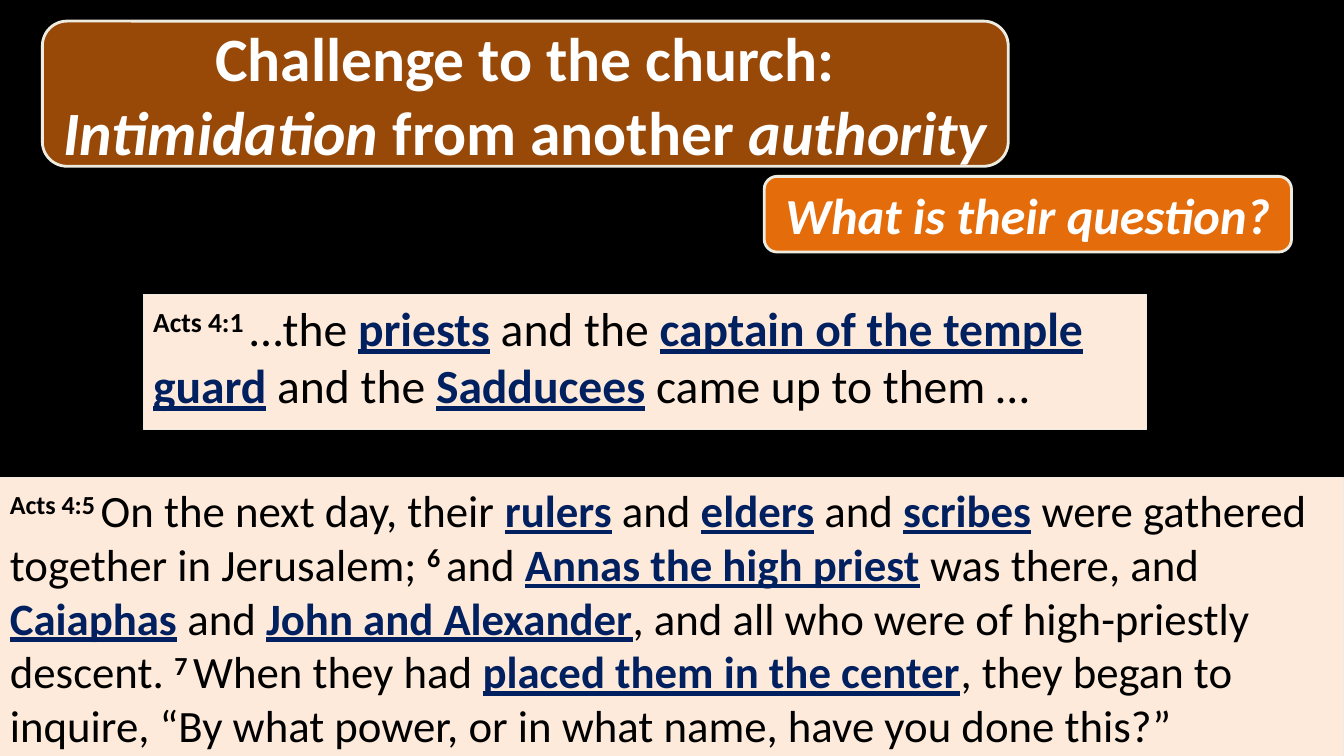
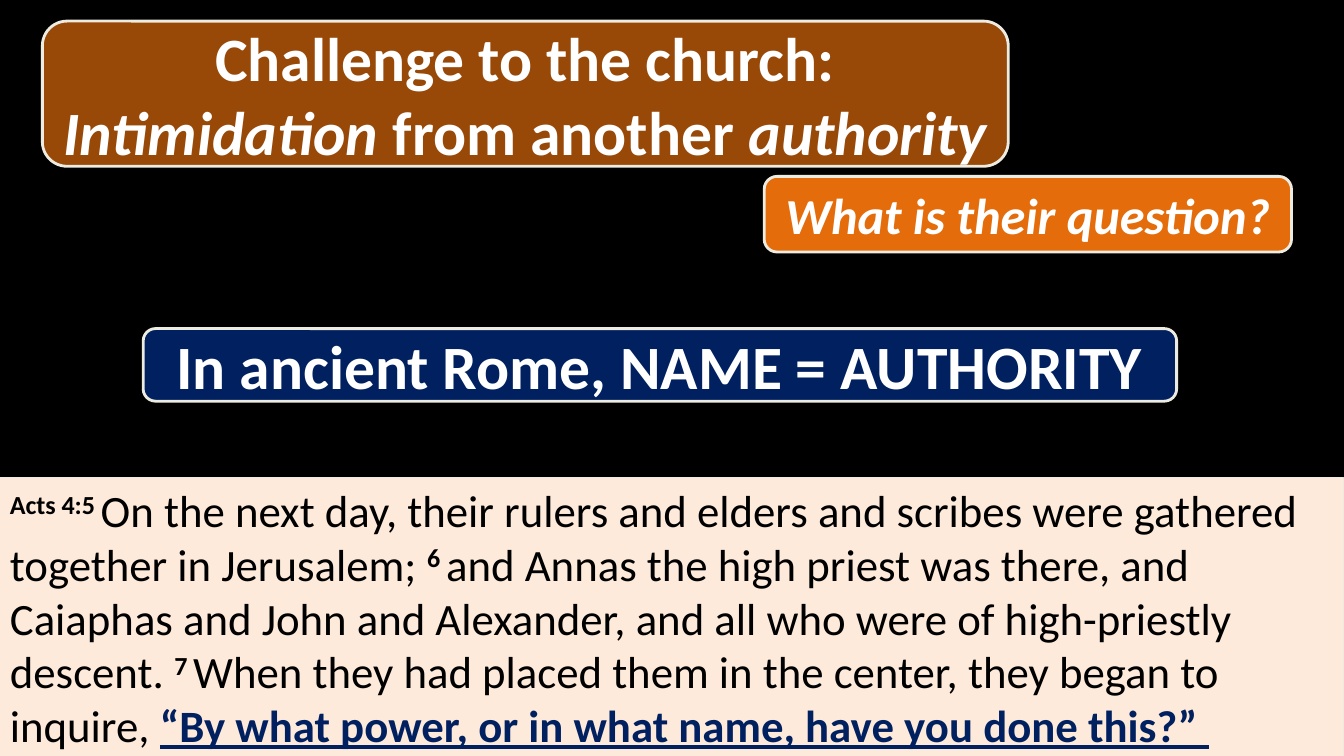
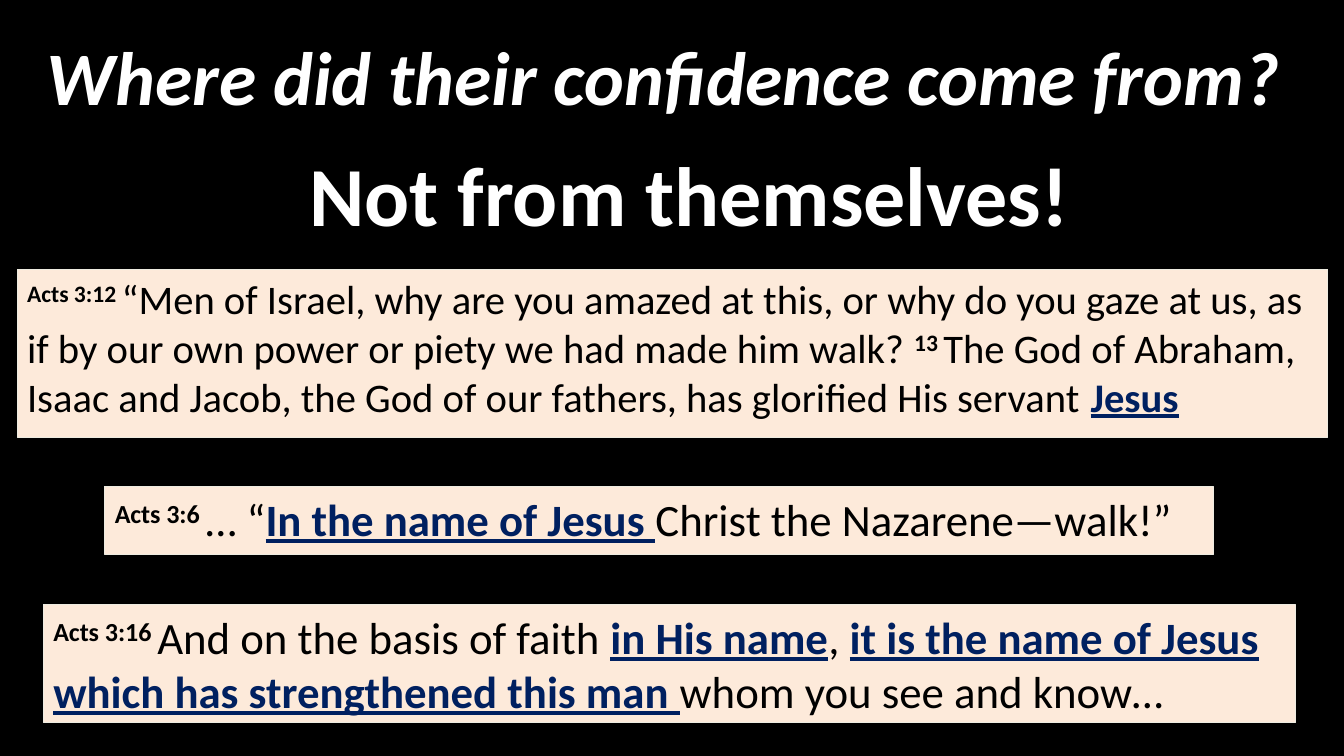
from pptx import Presentation
from pptx.dml.color import RGBColor
from pptx.enum.shapes import MSO_SHAPE
from pptx.enum.text import MSO_ANCHOR, PP_ALIGN
from pptx.util import Inches, Pt

RECT = MSO_SHAPE.RECTANGLE
CALLOUT = MSO_SHAPE.ROUNDED_RECTANGULAR_CALLOUT
TOP, MIDDLE = MSO_ANCHOR.TOP, MSO_ANCHOR.MIDDLE
LEFT, CENTER = PP_ALIGN.LEFT, PP_ALIGN.CENTER

FONT = "Calibri"
BLACK, WHITE, NAVY = "000000", "FFFFFF", "002060"
BROWN, ORANGE, CREAM, EDGE = "984807", "E46C0A", "FDEADA", "EEECE1"
CALLOUT_ADJUST = (-0.22, 0.5, 0.17)

STYLES = {
    "^": {"bold": True},
    "*": {"bold": True, "underline": True},
    "_": {"italic": True},
}

ACTS_4_5 = (
    "^Acts 4:5 |On the next day, their rulers and elders and scribes were gathered "
    "together in Jerusalem; |^6 |and Annas the high priest was there, and Caiaphas and "
    "John and Alexander, and all who were of high-priestly descent. |^7 |When they had "
    "placed them in the center, they began to inquire, “By what power, or in what name, "
    "have you done this?” "
)


def rgb(color):
    """Turn a hex string into a colour."""
    return RGBColor.from_string(color)


def add_runs(p, text, size, color, **base):
    """Add the runs of text, split at bars and styled by their first character."""
    for part in filter(None, text.split("|")):
        mark = part[0] if part[0] in STYLES else ""
        r = p.add_run()
        r.text = part[len(mark):]
        values = {"name": FONT, "size": Pt(size), **base, **STYLES.get(mark, {})}
        for name, value in values.items():
            setattr(r.font, name, value)
        r.font.color.rgb = rgb(NAVY if mark == "*" else color)
        if mark == "^":
            r.font._element.set("baseline", "30000")


def add_box(slide, shape, at, fill, line_width, anchor):
    """Add a filled shape, outlined when it has a line width."""
    sp = slide.shapes.add_shape(shape, *map(Inches, at))
    sp.shadow.inherit = False
    sp.fill.solid()
    sp.fill.fore_color.rgb = rgb(fill)
    if line_width:
        sp.line.color.rgb = rgb(EDGE)
        sp.line.width = Pt(line_width)
    else:
        sp.line.fill.background()
    sp.text_frame.word_wrap = True
    sp.text_frame.vertical_anchor = anchor
    return sp


def add_callout(slide, at, lines, size, fill, line_width=2, italic=False):
    """Add a rounded callout with centred bold white lines."""
    sp = add_box(slide, CALLOUT, at, fill, line_width, MIDDLE)
    for i, value in enumerate(CALLOUT_ADJUST):
        sp.adjustments[i] = value
    tf = sp.text_frame
    for i, line in enumerate(lines):
        p = tf.add_paragraph() if i else tf.paragraphs[0]
        p.alignment = CENTER
        add_runs(p, line, size, WHITE, bold=True, italic=italic)


def add_scripture(slide, at, text, size=32, keys=()):
    """Add a cream verse box with its key phrases underlined."""
    for key in keys:
        text = text.replace(key, f"|*{key}|")
    sp = add_box(slide, RECT, at, CREAM, 0.75, TOP)
    p = sp.text_frame.paragraphs[0]
    p.alignment = LEFT
    add_runs(p, text, size, BLACK, bold=False)


def add_slide(prs):
    """Add a blank slide with a black background."""
    slide = prs.slides.add_slide(prs.slide_layouts[6])
    slide.background.fill.solid()
    slide.background.fill.fore_color.rgb = rgb(BLACK)
    return slide


def add_challenge_slide(prs, keys):
    """Add a slide with the challenge, the question and the Acts 4:5 passage."""
    slide = add_slide(prs)
    add_scripture(slide, (0, 4.74, 13.33, 2.77), ACTS_4_5, keys=keys)
    add_callout(slide, (0.42, 0.21, 9.58, 1.44),
                ["Challenge to the church:", "_Intimidation| from another |_authority"],
                44, BROWN)
    add_callout(slide, (7.58, 1.75, 5.23, 0.75), ["What is their question?"],
                36, ORANGE, italic=True)
    return slide


def add_confidence_slide(prs):
    """Add the slide on the source of their confidence."""
    slide = add_slide(prs)
    add_callout(slide, (0, 0.33, 13.33, 0.83), ["Where did their confidence come from? "],
                54, BLACK, line_width=0, italic=True)
    add_callout(slide, (1.67, 1.5, 10.33, 0.83), ["Not from themselves!"],
                60, BLACK, line_width=0)
    add_scripture(slide, (0.17, 2.67, 13, 1.67),
                  "^Acts 3:12 |“Men of Israel, why are you amazed at this, or why do you gaze "
                  "at us, as if by our own power or piety we had made him walk? |^13 |The God of "
                  "Abraham, Isaac and Jacob, the God of our fathers, has glorified His servant "
                  "Jesus", 29, ["Jesus"])
    add_scripture(slide, (1.04, 4.83, 11, 0.67),
                  "^Acts 3:6 |… “In the name of Jesus Christ the Nazarene—walk!”",
                  keys=["In the name of Jesus "])
    add_scripture(slide, (0.43, 6, 12.42, 1.17),
                  "^Acts 3:16 |And on the basis of faith in His name, it is the name of Jesus "
                  "which has strengthened this man whom you see and know…",
                  keys=["in His name",
                        "it is the name of Jesus which has strengthened this man "])


def main():
    """Build and save the slides."""
    prs = Presentation()
    prs.slide_width, prs.slide_height = Inches(13.33), Inches(7.5)

    slide = add_challenge_slide(prs, [
        "rulers", "elders", "scribes", "Annas the high priest", "Caiaphas",
        "John and Alexander", "placed them in the center"])
    add_scripture(slide, (1.42, 2.92, 9.95, 1.34),
                  "^Acts 4:1 |…the priests and the captain of the temple guard and the "
                  "Sadducees came up to them …", 34,
                  ["priests", "captain of the temple guard", "Sadducees"])

    slide = add_challenge_slide(
        prs, ["“By what power, or in what name, have you done this?” "])
    add_callout(slide, (1.42, 3.26, 10.25, 0.72), ["In ancient Rome, NAME = AUTHORITY"],
                44, NAVY)

    add_confidence_slide(prs)
    prs.save("out.pptx")


if __name__ == "__main__":
    main()
